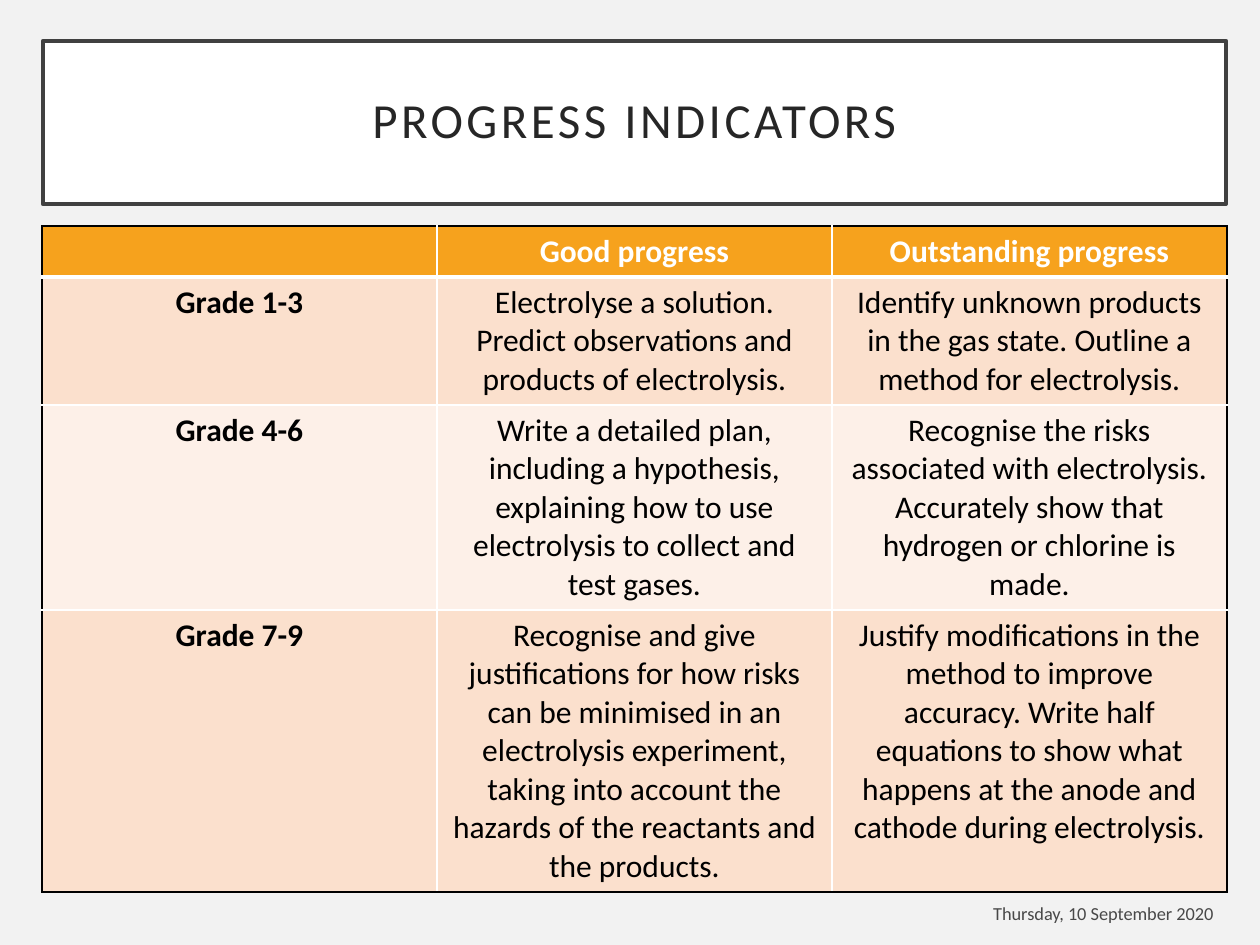
from dataclasses import dataclass

from lxml import etree
from pptx import Presentation
from pptx.dml.color import RGBColor
from pptx.enum.shapes import MSO_SHAPE
from pptx.enum.text import MSO_ANCHOR, PP_ALIGN
from pptx.oxml.ns import qn
from pptx.util import Pt

RECTANGLE = MSO_SHAPE.RECTANGLE
MIDDLE = MSO_ANCHOR.MIDDLE
CENTER, RIGHT = PP_ALIGN.CENTER, PP_ALIGN.RIGHT
PX = 914400 / 126


@dataclass(frozen=True)
class Theme:
    font: str = "Calibri"
    page: str = "F2F2F2"
    white: str = "FFFFFF"
    black: str = "000000"
    frame: str = "404040"
    title: str = "262626"
    header: str = "F6A21D"
    bands: tuple = ("FBE0CD", "FDF0E8")
    title_size: float = 28
    table_size: float = 18
    date_size: float = 10.5


THEME = Theme()


def write(frame, text, size, color, align=CENTER, bold=False, spacing=None, opacity=None):
    """Fill the first paragraph; spacing is in points, opacity in percent."""
    para = frame.paragraphs[0]
    para.alignment = align
    span = para.add_run()
    span.text = text
    span.font.name = THEME.font
    span.font.size = Pt(size)
    span.font.bold = bold
    span.font.color.rgb = RGBColor.from_string(color)
    properties = span.font._element
    if spacing:
        properties.set("spc", str(spacing * 100))
    if opacity:
        rgb = properties.find(".//" + qn("a:srgbClr"))
        etree.SubElement(rgb, qn("a:alpha"), val=str(opacity * 1000))
    return para


def add_border(cell, side, color, points):
    line = etree.SubElement(cell._tc.get_or_add_tcPr(), qn("a:ln" + side), w=str(Pt(points)))
    fill = etree.SubElement(line, qn("a:solidFill"))
    etree.SubElement(fill, qn("a:srgbClr"), val=color)


deck = Presentation()
deck.slide_width, deck.slide_height = round(1260 * PX), round(945 * PX)
page = deck.slides.add_slide(deck.slide_layouts[6])
page.background.fill.solid()
page.background.fill.fore_color.rgb = RGBColor.from_string(THEME.page)

# Title
title = page.shapes.add_shape(RECTANGLE, *(round(n * PX) for n in (43, 41, 1183, 163)))
title.shadow.inherit = False
title.fill.solid()
title.fill.fore_color.rgb = RGBColor.from_string(THEME.white)
title.line.color.rgb = RGBColor.from_string(THEME.frame)
title.line.width = Pt(2.5)
frame = title.text_frame
frame.word_wrap = True
frame.vertical_anchor = MIDDLE
frame.margin_left = frame.margin_right = frame.margin_top = frame.margin_bottom = round(25 * PX)
heading = write(frame, "PROGRESS INDICATORS", THEME.title_size, THEME.title, spacing=2)
heading.line_spacing = 0.9

# Progress table
rows = [
    ("", "Good progress", "Outstanding progress"),
    ("Grade 1-3",
     "Electrolyse a solution. Predict observations and products of electrolysis.",
     "Identify unknown products in the gas state. Outline a method for electrolysis."),
    ("Grade 4-6",
     "Write a detailed plan, including a hypothesis, explaining how to use electrolysis "
     "to collect and test gases.",
     "Recognise the risks associated with electrolysis. Accurately show that hydrogen or "
     "chlorine is made."),
    ("Grade 7-9",
     "Recognise and give justifications for how risks can be minimised in an electrolysis "
     "experiment, taking into account the hazards of the reactants and the products.",
     "Justify modifications in the method to improve accuracy. Write half equations to show "
     "what happens at the anode and cathode during electrolysis."),
]
row_heights = (51, 128, 205, 282)
column_width = 395
last_row, last_column = len(rows) - 1, len(rows[0]) - 1
table = page.shapes.add_table(
    len(rows), len(rows[0]), round(42 * PX), round(226 * PX),
    round(column_width * len(rows[0]) * PX), round(sum(row_heights) * PX)).table
for column in table.columns:
    column.width = round(column_width * PX)

for r, (texts, height) in enumerate(zip(rows, row_heights)):
    table.rows[r].height = round(height * PX)
    is_header = r == 0
    for c, text in enumerate(texts):
        cell = table.cell(r, c)
        outer_sides = {"L": c == 0, "R": c == last_column, "T": is_header, "B": r == last_row}
        for side, is_outer in outer_sides.items():
            under_header = (r, side) in ((0, "B"), (1, "T"))
            add_border(cell, side, THEME.black if is_outer else THEME.white,
                       3 if under_header else 1)
        cell.fill.solid()
        cell.fill.fore_color.rgb = RGBColor.from_string(
            THEME.header if is_header else THEME.bands[(r - 1) % 2])
        write(cell.text_frame, text, THEME.table_size,
              THEME.white if is_header else THEME.black, bold=is_header or c == 0)

# Date
date = page.shapes.add_textbox(*(round(n * PX) for n in (941, 891, 285, 44)))
date.text_frame.word_wrap = True
date.text_frame.vertical_anchor = MIDDLE
write(date.text_frame, "Thursday, 10 September 2020", THEME.date_size, THEME.black,
      align=RIGHT, opacity=70)

deck.save("out.pptx")
